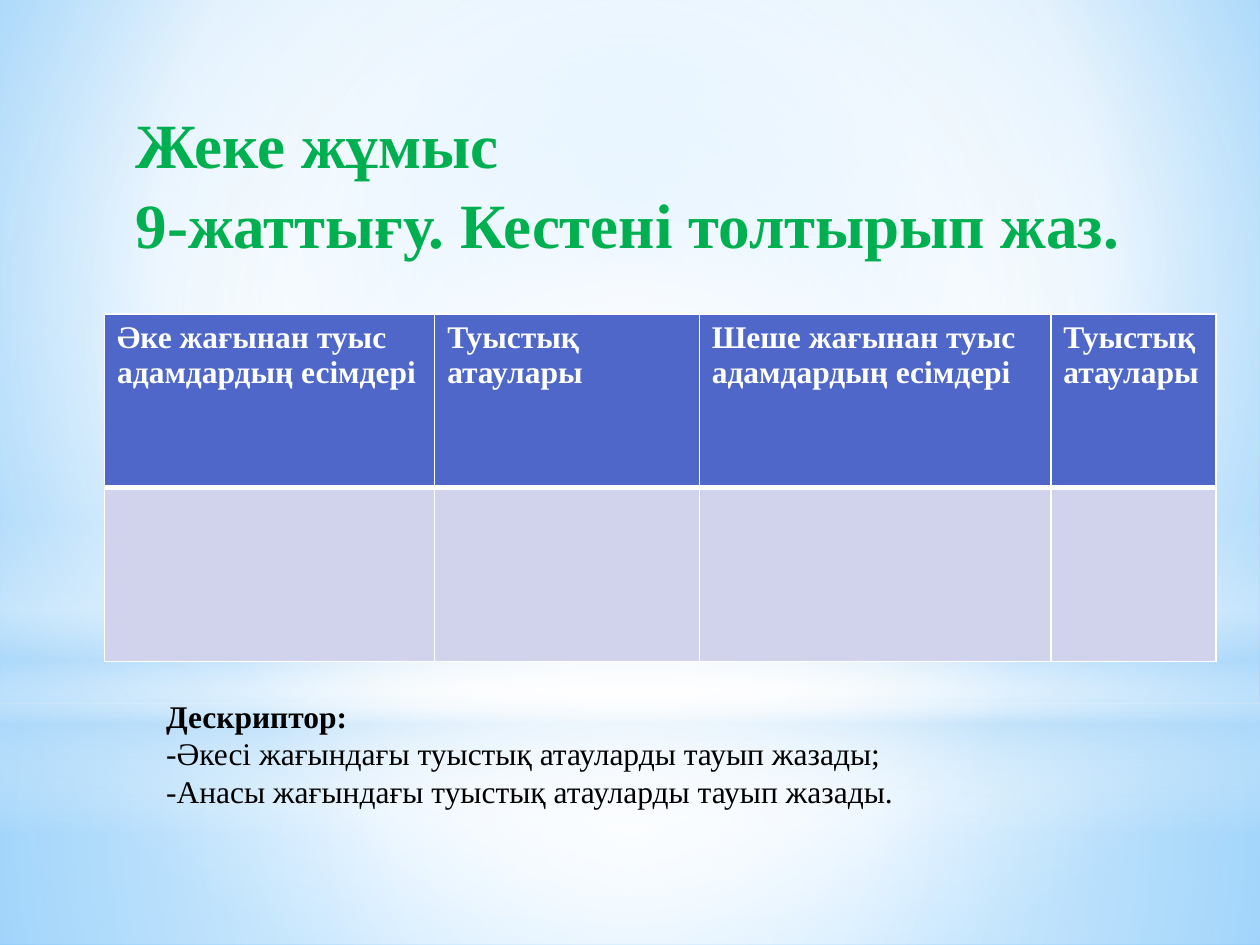
import dataclasses

import pptx
import pptx.dml.color
import pptx.enum.shapes
import pptx.enum.text
import pptx.oxml
import pptx.oxml.ns
import pptx.util


@dataclasses.dataclass(frozen=True)
class Theme:
    font: str = "Times New Roman"
    title_size: int = 36
    body_size: int = 18
    title: str = "00B050"
    text: str = "000000"
    white: str = "FFFFFF"
    header: str = "4E67C8"
    cell: str = "D0D3EB"
    sky: str = "9ED5FF"
    deep_sky: str = "5BB9FF"
    mist: str = "B4DCFA"


THEME = Theme()
WIDTH, HEIGHT = 10, 7.5
HORIZON = 5.58
CENTRE = (50, 50, 50, 50)
RECTANGLE = pptx.enum.shapes.MSO_SHAPE.RECTANGLE
OVAL = pptx.enum.shapes.MSO_SHAPE.OVAL
TOP = pptx.enum.text.MSO_ANCHOR.TOP
HEADINGS = [
    "Әке жағынан туыс адамдардың есімдері",
    "Туыстық атаулары",
    "Шеше жағынан туыс адамдардың есімдері",
    "Туыстық атаулары",
]
COLUMN_WIDTHS = [2.62, 2.1, 2.79, 1.31]


def inches(lengths):
    return [pptx.util.Inches(length) for length in lengths]


def rgb(colour):
    return pptx.dml.color.RGBColor.from_string(colour)


def paint_gradient(fill, element, stops, focus=None):
    fill.gradient()
    stop_list = "".join(
        f'<a:gs pos="{place * 1000}"><a:srgbClr val="{colour}">'
        f'<a:alpha val="{opacity * 1000}"/></a:srgbClr></a:gs>'
        for place, colour, opacity in stops
    )
    if focus:
        sides = " ".join(f'{side}="{share * 1000}"' for side, share in zip("ltrb", focus))
        direction = f'<a:path path="circle"><a:fillToRect {sides}/></a:path>'
    else:
        direction = '<a:lin ang="5400000" scaled="0"/>'
    gradient = pptx.oxml.parse_xml(
        f'<a:gradFill {pptx.oxml.ns.nsdecls("a")} rotWithShape="1">'
        f"<a:gsLst>{stop_list}</a:gsLst>{direction}</a:gradFill>"
    )
    previous = next(element.iter(pptx.oxml.ns.qn("a:gradFill")))
    previous.getparent().replace(previous, gradient)


def style_paragraph(para, size, colour, bold, spacing=None):
    para.line_spacing = spacing
    for span in para.runs:
        span.font.name = THEME.font
        span.font.size = pptx.util.Pt(size)
        span.font.bold = bold
        span.font.color.rgb = rgb(colour)


def add_backdrop(page):
    white, mist = THEME.white, THEME.mist
    paint_gradient(
        page.background.fill,
        page.element,
        [(0, THEME.sky, 100), (60, white, 100), (100, THEME.deep_sky, 100)],
        (20, 10, 20, 60),
    )
    band = [(0, white, 0), (29, white, 30), (45, mist, 40),
            (55, white, 26), (65, mist, 60), (100, white, 0)]
    layers = [
        (RECTANGLE, HORIZON, HEIGHT - HORIZON,
         [(0, white, 91), (37, white, 76), (100, mist, 79)], CENTRE),
        (RECTANGLE, 0, HORIZON,
         [(0, white, 89), (48, white, 62), (100, mist, 79)], CENTRE),
        (RECTANGLE, 4.12, 2.5, band, None),
        (OVAL, 1.75, HORIZON, [(0, white, 100), (56, white, 0)], CENTRE),
    ]
    for kind, top, height, stops, focus in layers:
        layer = page.shapes.add_shape(kind, *inches((0, top, WIDTH, height)))
        layer.shadow.inherit = False
        layer.line.fill.background()
        paint_gradient(layer.fill, layer.element, stops, focus)


def add_text(page, box, text):
    holder = page.shapes.add_textbox(*inches(box))
    frame = holder.text_frame
    frame.word_wrap = True
    frame.vertical_anchor = TOP
    frame.text = text
    return frame


def add_title(page, box):
    frame = add_text(page, box, "Жеке жұмыс\v9-жаттығу. Кестені толтырып жаз.")
    style_paragraph(frame.paragraphs[0], THEME.title_size, THEME.title, True, 1.05)


def set_cell_borders(cell, bottom_width):
    properties = cell._tc.get_or_add_tcPr()
    widths = {"lnL": 1, "lnR": 1, "lnT": 1, "lnB": bottom_width}
    for place, (side, width) in enumerate(widths.items()):
        border = pptx.oxml.parse_xml(
            f'<a:{side} {pptx.oxml.ns.nsdecls("a")} w="{pptx.util.Pt(width)}">'
            f'<a:solidFill><a:srgbClr val="{THEME.white}"/></a:solidFill></a:{side}>'
        )
        properties.insert(place, border)


def add_relatives_table(page, box):
    table = page.shapes.add_table(2, len(HEADINGS), *inches(box)).table
    for column, width in zip(table.columns, inches(COLUMN_WIDTHS)):
        column.width = width
    row_styles = [(HEADINGS, THEME.header, 3), ([""] * len(HEADINGS), THEME.cell, 1)]
    for row, (texts, colour, bottom_width) in zip(table.rows, row_styles):
        for cell, text in zip(row.cells, texts):
            cell.fill.solid()
            cell.fill.fore_color.rgb = rgb(colour)
            set_cell_borders(cell, bottom_width)
            cell.text_frame.text = text
            style_paragraph(cell.text_frame.paragraphs[0], THEME.body_size, THEME.white, True)


def add_descriptor(page, box):
    frame = add_text(
        page,
        box,
        "Дескриптор:\n"
        "-Әкесі жағындағы туыстық атауларды тауып жазады;\n"
        "-Анасы жағындағы туыстық атауларды тауып жазады.",
    )
    frame.auto_size = pptx.enum.text.MSO_AUTO_SIZE.SHAPE_TO_FIT_TEXT
    for place, para in enumerate(frame.paragraphs):
        style_paragraph(para, THEME.body_size, THEME.text, place == 0)


def main():
    deck = pptx.Presentation()
    deck.slide_width, deck.slide_height = inches((WIDTH, HEIGHT))
    page = deck.slides.add_slide(deck.slide_layouts[6])
    add_backdrop(page)
    add_title(page, (0.98, 0.76, 8.43, 1.26))
    add_relatives_table(page, (0.83, 2.49, 8.82, 2.76))
    add_descriptor(page, (1.22, 5.48, 8.03, 1.01))
    deck.save("out.pptx")


if __name__ == "__main__":
    main()
